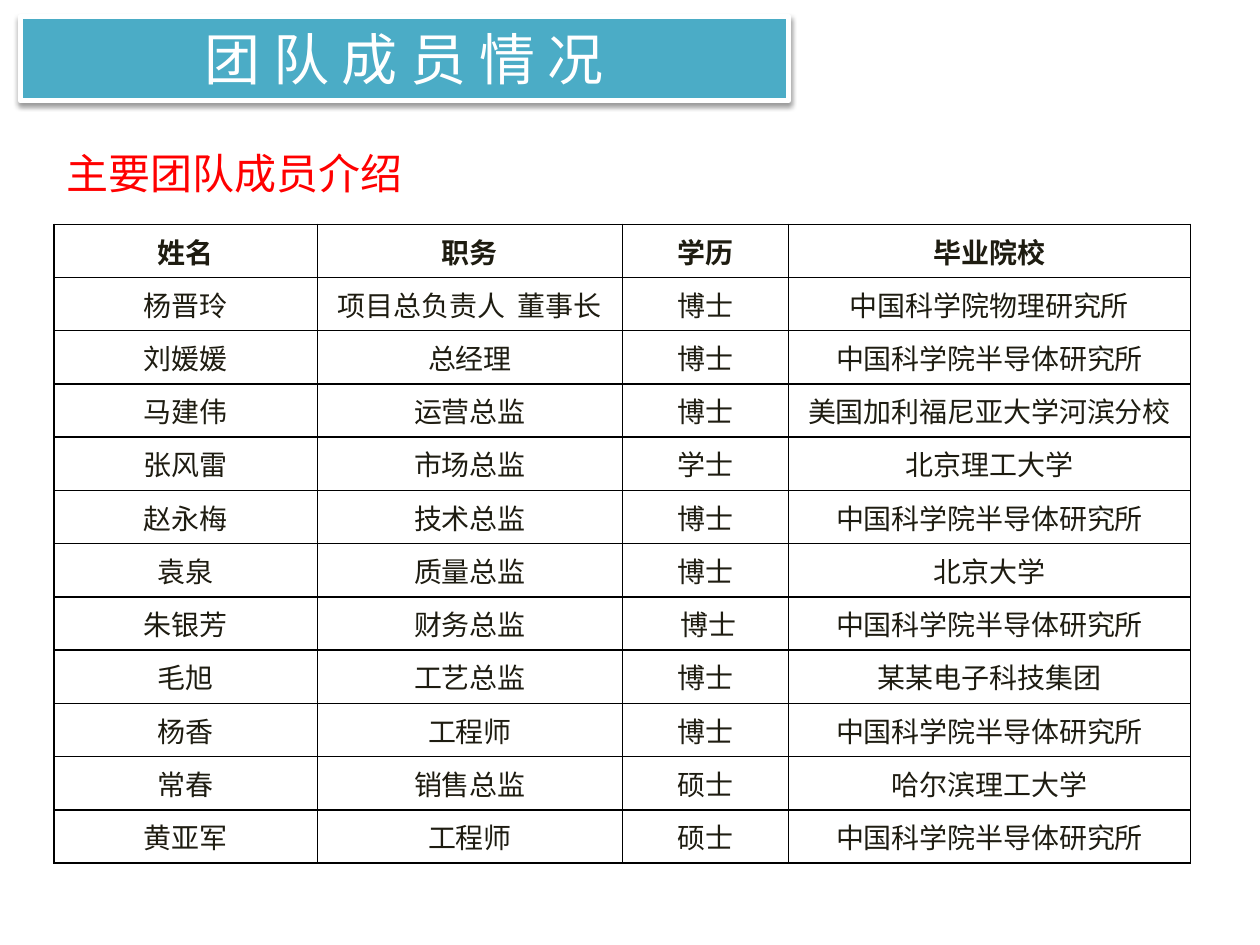
"""Build the slide that introduces the main team members."""
import pptx
import pptx.dml.color
import pptx.enum.text
import pptx.oxml
import pptx.oxml.ns
import pptx.util

Inches, Pt = pptx.util.Inches, pptx.util.Pt
ALIGN, ANCHOR = pptx.enum.text.PP_ALIGN, pptx.enum.text.MSO_ANCHOR
AUTO = pptx.enum.text.MSO_AUTO_SIZE
NS = pptx.oxml.ns.nsdecls("a")
CJK_FONT, LATIN_FONT = "Noto Sans CJK SC", "Times New Roman"

TITLE = "团 队 成 员 情 况"
SUBTITLE = "主要团队成员介绍"
MEMBERS = [
    ("姓名", "职务", "学历", "毕业院校"),
    ("杨晋玲", "项目总负责人  董事长", "博士", "中国科学院物理研究所"),
    ("刘媛媛", "总经理", "博士", "中国科学院半导体研究所"),
    ("马建伟", "运营总监", "博士", "美国加利福尼亚大学河滨分校"),
    ("张风雷", "市场总监", "学士", "北京理工大学"),
    ("赵永梅", "技术总监", "博士", "中国科学院半导体研究所"),
    ("袁泉", "质量总监", "博士", "北京大学"),
    ("朱银芳", "财务总监", " 博士", "中国科学院半导体研究所"),
    ("毛旭", "工艺总监", "博士", "某某电子科技集团"),
    ("杨香", "工程师", "博士", "中国科学院半导体研究所"),
    ("常春", "销售总监", "硕士", "哈尔滨理工大学"),
    ("黄亚军", "工程师", "硕士", "中国科学院半导体研究所"),
]
COL_WIDTHS = [2.09, 2.42, 1.32, 3.19]
ROW_HEIGHT = 5.07 / len(MEMBERS)


def rgb(value):
    return pptx.dml.color.RGBColor.from_string(value)


def write(tf, text, size, color, font=LATIN_FONT, bold=False, align=ALIGN.CENTER):
    tf.text = text
    p = tf.paragraphs[0]
    p.alignment = align
    f = p.runs[0].font
    f.size, f.bold, f.name = Pt(size), bold, font
    f.color.rgb = rgb(color)
    f._element.append(pptx.oxml.parse_xml(f'<a:ea {NS} typeface="{CJK_FONT}"/>'))


def add_banner(s):
    sp = s.shapes.title
    sp.left, sp.top, sp.width, sp.height = map(Inches, (0.16, 0.13, 6.1, 0.67))
    sp_pr = sp._element.spPr
    sp_pr.append(pptx.oxml.parse_xml(
        f'<a:prstGeom {NS} prst="homePlate"><a:avLst/></a:prstGeom>'))
    sp.fill.solid()
    sp.fill.fore_color.rgb = rgb("4BACC6")
    sp.line.color.rgb = rgb("FFFFFF")
    sp.line.width = Pt(3)
    sp_pr.append(pptx.oxml.parse_xml(
        f'<a:effectLst {NS}><a:outerShdw blurRad="{Pt(3.1)}" dist="{Pt(1.6)}" '
        'dir="5400000" rotWithShape="0"><a:srgbClr val="000000">'
        '<a:alpha val="38000"/></a:srgbClr></a:outerShdw></a:effectLst>'))
    tf = sp.text_frame
    tf.auto_size = AUTO.NONE
    tf.vertical_anchor = ANCHOR.MIDDLE
    write(tf, TITLE, 32, "FFFFFF", CJK_FONT)


def add_subtitle(s):
    sp = s.shapes.add_textbox(*map(Inches, (0.43, 1.12, 2.91, 0.51)))
    tf = sp.text_frame
    tf.word_wrap = False
    tf.auto_size = AUTO.SHAPE_TO_FIT_TEXT
    write(tf, SUBTITLE, 24, "FF0000", align=ALIGN.LEFT)


def set_borders(cell):
    tc_pr = cell._tc.get_or_add_tcPr()
    for i, side in enumerate(("lnL", "lnR", "lnT", "lnB")):
        tc_pr.insert(i, pptx.oxml.parse_xml(
            f'<a:{side} {NS} w="{Pt(1)}"><a:solidFill>'
            f'<a:srgbClr val="000000"/></a:solidFill></a:{side}>'))


def add_members(s):
    frame = s.shapes.add_table(
        len(MEMBERS), len(COL_WIDTHS), Inches(0.43), Inches(1.78),
        Inches(sum(COL_WIDTHS)), Inches(ROW_HEIGHT * len(MEMBERS)))
    table = frame.table
    table.horz_banding = False
    for col, width in zip(table.columns, COL_WIDTHS):
        col.width = Inches(width)
    for r, member in enumerate(MEMBERS):
        table.rows[r].height = Inches(ROW_HEIGHT)
        for c, text in enumerate(member):
            cell = table.cell(r, c)
            cell.fill.background()
            cell.vertical_anchor = ANCHOR.MIDDLE
            write(cell.text_frame, text, 16, "1E1C11", bold=r == 0)
            set_borders(cell)


def main():
    prs = pptx.Presentation()
    prs.slide_width, prs.slide_height = Inches(10), Inches(7.5)
    s = prs.slides.add_slide(prs.slide_layouts[5])
    add_banner(s)
    add_members(s)
    add_subtitle(s)
    prs.save("out.pptx")


if __name__ == "__main__":
    main()
